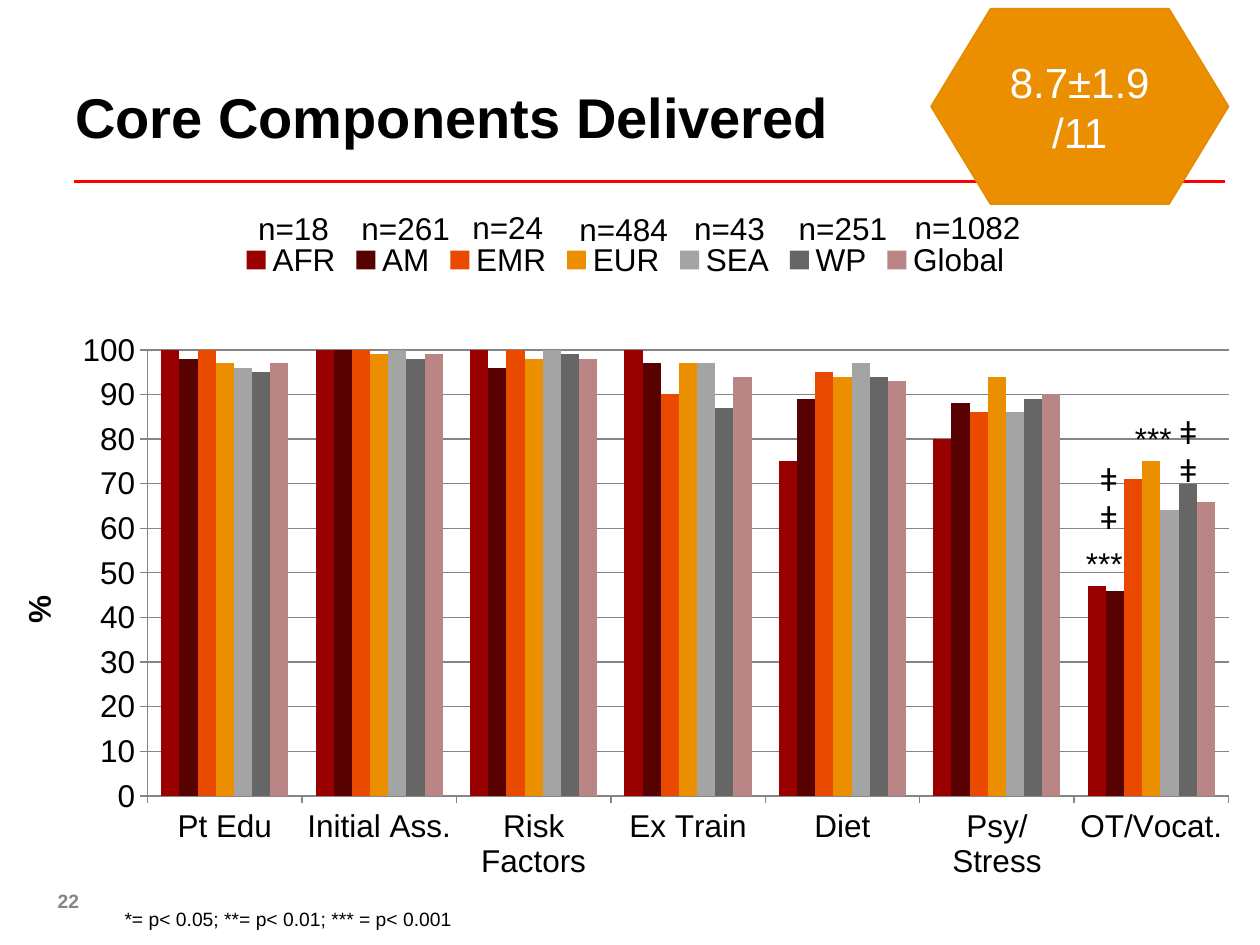
from lxml.etree import SubElement
from pptx import Presentation
from pptx.chart.data import CategoryChartData
from pptx.dml.color import RGBColor
from pptx.enum.chart import XL_CHART_TYPE, XL_LEGEND_POSITION, XL_TICK_MARK
from pptx.enum.shapes import MSO_CONNECTOR, MSO_SHAPE
from pptx.enum.text import MSO_ANCHOR, PP_ALIGN
from pptx.oxml import parse_xml
from pptx.oxml.ns import nsdecls, qn
from pptx.util import Inches, Pt

CATEGORIES = ["Pt Edu", "Initial Ass.", "Risk Factors", "Ex Train", "Diet",
              "Psy/Stress", "OT/Vocat."]
REGIONS = [
    ("AFR", "990000", (100, 100, 100, 100, 75, 80, 47)),
    ("AM", "580101", (98, 100, 96, 97, 89, 88, 46)),
    ("EMR", "E94A00", (100, 100, 100, 90, 95, 86, 71)),
    ("EUR", "EB8F00", (97, 99, 98, 97, 94, 94, 75)),
    ("SEA", "A4A4A4", (96, 100, 100, 97, 97, 86, 64)),
    ("WP", "666666", (95, 98, 99, 87, 94, 89, 70)),
    ("Global", "BA8585", (97, 99, 98, 94, 93, 90, 66)),
]
SAMPLE_SIZES = [("n=18", 1.95, 1.61, 0.81), ("n=261", 2.77, 1.61, 1),
                ("n=24", 3.65, 1.6, 1.15), ("n=484", 4.5, 1.62, 1.15),
                ("n=43", 5.41, 1.61, 1.15), ("n=251", 6.24, 1.61, 1.15),
                ("n=1082", 7.16, 1.6, 1.15)]
MARKS = [("***", 8.52, 4.27, 0.5, 0.4), ("***", 8.91, 3.28, 0.5, 0.4),
         ("ǂǂ", 8.63, 3.6, 0.3, 0.71), ("ǂǂ", 9.26, 3.23, 0.3, 0.71)]


def rgb(color):
    return RGBColor.from_string(color)


def style_font(font, size=18, color="000000", bold=False):
    font.name, font.size, font.bold = "Arial", Pt(size), bold
    font.color.rgb = rgb(color)


def write(tf, text, align=PP_ALIGN.LEFT, anchor=MSO_ANCHOR.TOP, **style):
    tf.word_wrap = True
    tf.vertical_anchor = anchor
    for i, line in enumerate(text.split("\n")):
        p = tf.paragraphs[0] if i == 0 else tf.add_paragraph()
        p.alignment = align
        r = p.add_run()
        r.text = line
        style_font(r.font, **style)


def place(parent, index, **position):
    for old in parent.findall(qn("c:layout")):
        parent.remove(old)
    layout = parse_xml(f"<c:layout {nsdecls('c')}><c:manualLayout/></c:layout>")
    for tag, value in position.items():
        SubElement(layout[0], qn(f"c:{tag}")).set("val", str(value))
    parent.insert(index, layout)


class Deck:
    """Holds the slide and its accent, grid and badge colours."""

    rule, grid, badge, badge_edge = "FF0000", "858585", "EB8F00", "E68C00"

    def __init__(self, prs):
        self.s = prs.slides.add_slide(prs.slide_layouts[6])

    def text(self, text, x, y, w, h, **style):
        sp = self.s.shapes.add_textbox(Inches(x), Inches(y), Inches(w), Inches(h))
        write(sp.text_frame, text, **style)

    def line(self, x1, y1, x2, y2):
        c = self.s.shapes.add_connector(MSO_CONNECTOR.STRAIGHT, Inches(x1),
                                        Inches(y1), Inches(x2), Inches(y2))
        c.line.color.rgb, c.line.width = rgb(self.rule), Pt(2)
        SubElement(c._element.spPr, qn("a:effectLst"))

    def hexagon(self, text, x, y, w, h):
        sp = self.s.shapes.add_shape(MSO_SHAPE.FLOWCHART_PREPARATION, Inches(x),
                                     Inches(y), Inches(w), Inches(h))
        sp.shadow.inherit = False
        sp.fill.solid()
        sp.fill.fore_color.rgb = rgb(self.badge)
        sp.line.color.rgb, sp.line.width = rgb(self.badge_edge), Pt(1)
        write(sp.text_frame, text, align=PP_ALIGN.CENTER,
              anchor=MSO_ANCHOR.MIDDLE, size=24, color="FFFFFF")

    def chart(self, x, y, w, h):
        data = CategoryChartData()
        data.categories = CATEGORIES
        for name, _, values in REGIONS:
            data.add_series(name, values)
        chart = self.s.shapes.add_chart(
            XL_CHART_TYPE.COLUMN_CLUSTERED, Inches(x), Inches(y), Inches(w),
            Inches(h), data).chart
        style_font(chart.font)
        chart.has_title = False
        chart.has_legend = True
        chart.legend.position = XL_LEGEND_POSITION.TOP
        chart.legend.include_in_layout = False
        plot = chart.plots[0]
        plot.gap_width, plot.overlap, plot.vary_by_categories = 150, 0, False
        for series, (_, color, _) in zip(plot.series, REGIONS):
            series.format.fill.solid()
            series.format.fill.fore_color.rgb = rgb(color)
        for axis in (chart.category_axis, chart.value_axis):
            axis.major_tick_mark = XL_TICK_MARK.OUTSIDE
            axis.format.line.color.rgb = rgb(self.grid)
        axis = chart.value_axis
        axis.minimum_scale, axis.maximum_scale, axis.major_unit = 0, 100, 10
        axis.major_gridlines.format.line.color.rgb = rgb(self.grid)
        write(axis.axis_title.text_frame, "%", align=PP_ALIGN.CENTER, bold=True)
        place(axis.axis_title._element, 1, xMode="edge", yMode="edge",
              x=0.01, y=0.54)
        place(chart._chartSpace.chart.plotArea, 0, layoutTarget="inner",
              xMode="edge", yMode="edge", x=0.118, y=0.183, w=0.864, h=0.663)


def main():
    prs = Presentation()
    prs.slide_width, prs.slide_height = Inches(10), Inches(7.5)
    deck = Deck(prs)
    deck.text("22", 0.36, 6.95, 0.75, 0.4, anchor=MSO_ANCHOR.MIDDLE, size=11,
              color="858585", bold=True)
    deck.text("Core Components Delivered", 0.5, 0.3, 9, 1.25,
              anchor=MSO_ANCHOR.MIDDLE, size=32, bold=True)
    deck.line(0.59, 1.44, 9.72, 1.44)
    deck.chart(0, 1.8, 9.93, 5.34)
    deck.text("*= p< 0.05; **= p< 0.01; *** = p< 0.001", 0.89, 7.15, 2.96, 0.29,
              size=11)
    for text, x, y, w in SAMPLE_SIZES:
        deck.text(text, x, y, w, 0.4)
    deck.hexagon("8.7±1.9\n/11", 7.39, 0.07, 2.36, 1.55)
    for mark in MARKS:
        deck.text(*mark)
    prs.save("out.pptx")


if __name__ == "__main__":
    main()
